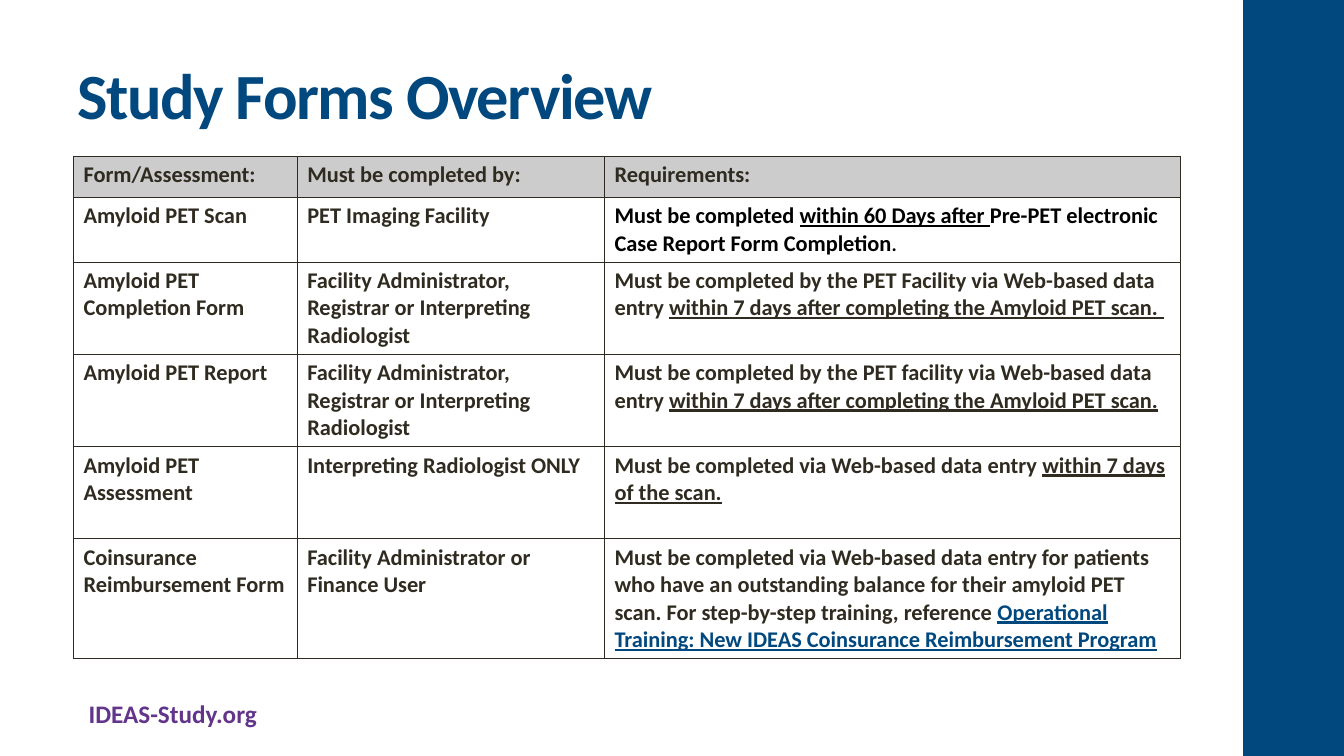
from dataclasses import dataclass

from lxml import etree
from pptx import Presentation
from pptx.dml.color import RGBColor
from pptx.enum import shapes, text
from pptx.oxml import ns
from pptx.util import Pt

COLORS = {
    "blue": "00487E",
    "purple": "62358B",
    "ink": "2F2B20",
    "black": "000000",
    "header": "CCCCCC",
}
FONT = "Calibri"
COLUMN_WIDTHS = (159.8, 219.5, 411.6)
HEADINGS = ("Form/Assessment:", "Must be completed by:", "Requirements:")
HEADING_HEIGHT = 29.4


@dataclass(frozen=True)
class Phrase:
    words: str
    underline: bool = False
    color: str = "ink"
    size: float = 16


@dataclass(frozen=True)
class StudyForm:
    name: str
    completed_by: str
    requirements: tuple[Phrase, ...]
    height: float


@dataclass(frozen=True)
class Label:
    words: str
    left: float
    top: float
    width: float
    height: float
    size: float
    color: str
    anchor: text.MSO_ANCHOR
    wrap: bool
    spacing: float = 0


FACILITY_STAFF = "Facility Administrator, Registrar or Interpreting Radiologist"
FORMS = (
    StudyForm("Amyloid PET Scan", "PET Imaging Facility", (
        Phrase("Must be completed ", color="black"),
        Phrase("within 60 Days after ", True, "black"),
        Phrase("Pre-PET electronic Case Report Form Completion", color="black"),
        Phrase(".", color="black", size=14),
    ), 46.3),
    StudyForm("Amyloid PET Completion Form", FACILITY_STAFF, (
        Phrase("Must be completed by the PET Facility via Web-based data entry "),
        Phrase("within 7 days after completing the Amyloid PET scan. ", True),
    ), 65.9),
    StudyForm("Amyloid PET Report", FACILITY_STAFF, (
        Phrase("Must be completed by the PET facility via Web-based data entry "),
        Phrase("within 7 days after completing the Amyloid PET scan.", True),
    ), 65.9),
    StudyForm("Amyloid PET Assessment", "Interpreting Radiologist ONLY", (
        Phrase("Must be completed via Web-based data entry "),
        Phrase("within 7 days of the scan.", True),
    ), 65.9),
    StudyForm("Coinsurance Reimbursement Form",
              "Facility Administrator or Finance User", (
        Phrase("Must be completed via Web-based data entry for patients who have "
               "an outstanding balance for their amyloid PET scan. For "
               "step-by-step training, reference "),
        Phrase("Operational Training: New IDEAS Coinsurance Reimbursement Program",
               True, "blue"),
    ), 85.6),
)
LABELS = (
    Label("IDEAS-Study.org", 56.2, 495.4, 135.4, 28.8, 18, "purple",
          text.MSO_ANCHOR.TOP, False),
    Label("Study Forms Overview", 48.2, 21.6, 800, 90, 46, "blue",
          text.MSO_ANCHOR.MIDDLE, True, -1),
)


def rgb(name: str) -> RGBColor:
    return RGBColor.from_string(COLORS[name])


def style(font, size: float, color: str) -> None:
    font.name = FONT
    font.size = Pt(size)
    font.bold = True
    font.color.rgb = rgb(color)


def draw_label(slide, label: Label) -> None:
    box = slide.shapes.add_textbox(
        Pt(label.left), Pt(label.top), Pt(label.width), Pt(label.height))
    frame = box.text_frame
    frame.word_wrap = label.wrap
    frame.vertical_anchor = label.anchor
    paragraph = frame.paragraphs[0]
    run = paragraph.add_run()
    run.text = label.words
    style(paragraph.font, label.size, label.color)
    if label.spacing:
        run._r.get_or_add_rPr().set("spc", str(round(label.spacing * 100)))


def draw_borders(cell) -> None:
    properties = cell._tc.get_or_add_tcPr()
    for side in ("lnL", "lnR", "lnT", "lnB"):
        line = etree.SubElement(properties, ns.qn(f"a:{side}"), w=str(Pt(1)))
        fill = etree.SubElement(line, ns.qn("a:solidFill"))
        etree.SubElement(fill, ns.qn("a:srgbClr"), val=COLORS["ink"])


def fill_cell(cell, phrases: tuple[Phrase, ...], heading: bool) -> None:
    draw_borders(cell)
    if heading:
        cell.fill.solid()
        cell.fill.fore_color.rgb = rgb("header")
    else:
        cell.fill.background()
    paragraph = cell.text_frame.paragraphs[0]
    first = phrases[0]
    style(paragraph.font, first.size, first.color)
    for phrase in phrases:
        run = paragraph.add_run()
        run.text = phrase.words
        if phrase.underline:
            run.font.underline = True
        if phrase.color != first.color:
            run.font.color.rgb = rgb(phrase.color)
        if phrase.size != first.size:
            run.font.size = Pt(phrase.size)


def draw_forms(slide) -> None:
    heights = (HEADING_HEIGHT, *(form.height for form in FORMS))
    rows = [tuple((Phrase(heading),) for heading in HEADINGS)]
    rows += [((Phrase(form.name),), (Phrase(form.completed_by),),
              form.requirements) for form in FORMS]
    table = slide.shapes.add_table(
        len(rows), len(HEADINGS), Pt(52.5), Pt(111.6),
        Pt(sum(COLUMN_WIDTHS)), Pt(sum(heights))).table
    table.first_row = False
    table.horz_banding = False
    for column, width in zip(table.columns, COLUMN_WIDTHS):
        column.width = Pt(width)
    for row_index, (row, height) in enumerate(zip(rows, heights)):
        table.rows[row_index].height = Pt(height)
        for column_index, phrases in enumerate(row):
            fill_cell(table.cell(row_index, column_index), phrases, row_index == 0)


def main() -> None:
    presentation = Presentation()
    presentation.slide_width = Pt(960)
    presentation.slide_height = Pt(540)
    slide = presentation.slides.add_slide(presentation.slide_layouts[6])
    side_band = slide.shapes.add_shape(
        shapes.MSO_SHAPE.RECTANGLE, Pt(888), Pt(0), Pt(72), Pt(540))
    side_band.shadow.inherit = False
    side_band.fill.solid()
    side_band.fill.fore_color.rgb = rgb("blue")
    side_band.line.fill.background()
    for label in LABELS:
        draw_label(slide, label)
    draw_forms(slide)
    presentation.save("out.pptx")


if __name__ == "__main__":
    main()
